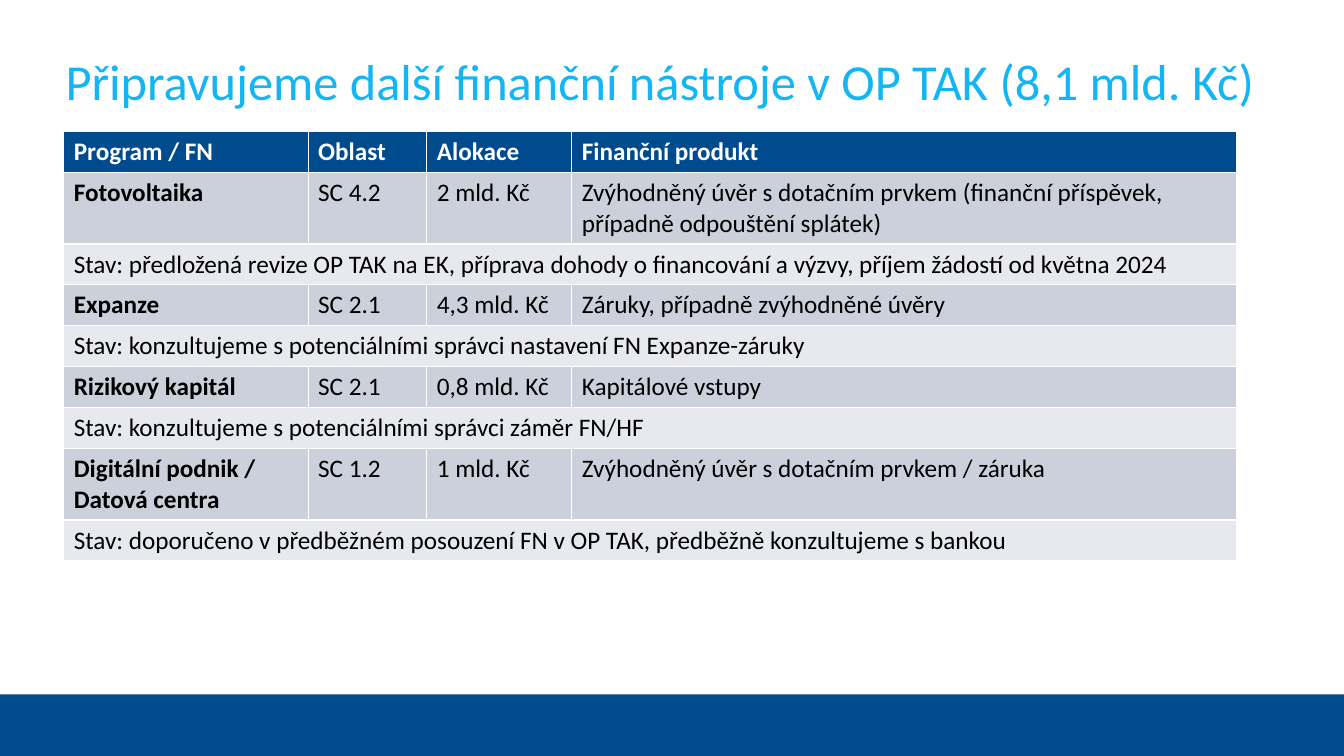
from pptx import Presentation
from pptx.dml.color import RGBColor
from pptx.enum.shapes import MSO_SHAPE as Shape
from pptx.enum.text import MSO_ANCHOR as Anchor, MSO_AUTO_SIZE as AutoSize, PP_ALIGN as Align
from pptx.util import Pt

# Content
HEADING = "Připravujeme další finanční nástroje v OP TAK (8,1 mld. Kč)"
COLUMNS = ("Program / FN", "Oblast", "Alokace", "Finanční produkt")
PROGRAMMES = [
    (("Fotovoltaika", "SC 4.2", "2 mld. Kč",
      "Zvýhodněný úvěr s dotačním prvkem (finanční příspěvek, případně odpouštění splátek)"),
     "Stav: předložená revize OP TAK na EK, příprava dohody o financování a výzvy, "
     "příjem žádostí od května 2024"),
    (("Expanze", "SC 2.1", "4,3 mld. Kč", "Záruky, případně zvýhodněné úvěry"),
     "Stav: konzultujeme s potenciálními správci nastavení FN Expanze-záruky"),
    (("Rizikový kapitál", "SC 2.1", "0,8 mld. Kč", "Kapitálové vstupy"),
     "Stav: konzultujeme s potenciálními správci záměr FN/HF"),
    (("Digitální podnik / Datová centra", "SC 1.2", "1 mld. Kč",
      "Zvýhodněný úvěr s dotačním prvkem / záruka"),
     "Stav: doporučeno v předběžném posouzení FN v OP TAK, předběžně konzultujeme s bankou"),
]

# Style and measures in points
FONT = "Calibri"
NAVY, SKY, WHITE, BLACK = "004B8D", "13B5F4", "FFFFFF", "000000"
DATA_FILL, STATUS_FILL = "CCD0DB", "E7E9EE"
SLIDE_W, SLIDE_H, PAGE_H = 960, 540, 496
COLUMN_WIDTHS = (174.6, 84.8, 103.6, 475)
ROW_H = 29.2


def color(value):
    return RGBColor.from_string(value)


def style_font(paragraph, size, ink, bold=False):
    font = paragraph.font
    font.name, font.size, font.bold = FONT, Pt(size), bold
    font.color.rgb = color(ink)


def fill_cell(cell, text, fill, ink=BLACK, bold=False):
    cell.fill.solid()
    cell.fill.fore_color.rgb = color(fill)
    cell.text = text
    style_font(cell.text_frame.paragraphs[0], 18, ink, bold)


prs = Presentation()
prs.slide_width, prs.slide_height = Pt(SLIDE_W), Pt(SLIDE_H)
slide = prs.slides.add_slide(prs.slide_layouts[5])

# Navy background with the white page on it, behind the title
slide.background.fill.solid()
slide.background.fill.fore_color.rgb = color(NAVY)
page = slide.shapes.add_shape(Shape.RECTANGLE, 0, 0, Pt(SLIDE_W), Pt(PAGE_H))
page.shadow.inherit = False
page.fill.solid()
page.fill.fore_color.rgb = color(WHITE)
page.line.fill.background()
heading = slide.shapes.title
heading.element.addprevious(page.element)

# Heading
heading.left, heading.top, heading.width, heading.height = Pt(46.8), Pt(35.3), Pt(865.4), Pt(44)
frame = heading.text_frame
frame.text = HEADING
frame.word_wrap = True
frame.auto_size = AutoSize.NONE
frame.vertical_anchor = Anchor.MIDDLE
frame.margin_left = frame.margin_top = frame.margin_right = frame.margin_bottom = 0
frame.paragraphs[0].alignment = Align.LEFT
style_font(frame.paragraphs[0], 36, SKY)

# Table: a header, then a data row and a merged status row per programme
row_count = 1 + 2 * len(PROGRAMMES)
table = slide.shapes.add_table(row_count, len(COLUMNS), Pt(45.5), Pt(93.9),
                               Pt(sum(COLUMN_WIDTHS)), Pt(ROW_H * row_count)).table
for column, width in zip(table.columns, COLUMN_WIDTHS):
    column.width = Pt(width)
for row in table.rows:
    row.height = Pt(ROW_H)

for col, label in enumerate(COLUMNS):
    fill_cell(table.cell(0, col), label, NAVY, WHITE, bold=True)
for index, (details, status) in enumerate(PROGRAMMES):
    data_row = 1 + 2 * index
    for col, detail in enumerate(details):
        fill_cell(table.cell(data_row, col), detail, DATA_FILL, bold=col == 0)
    status_cell = table.cell(data_row + 1, 0)
    status_cell.merge(table.cell(data_row + 1, len(COLUMNS) - 1))
    fill_cell(status_cell, status, STATUS_FILL)

prs.save("out.pptx")
